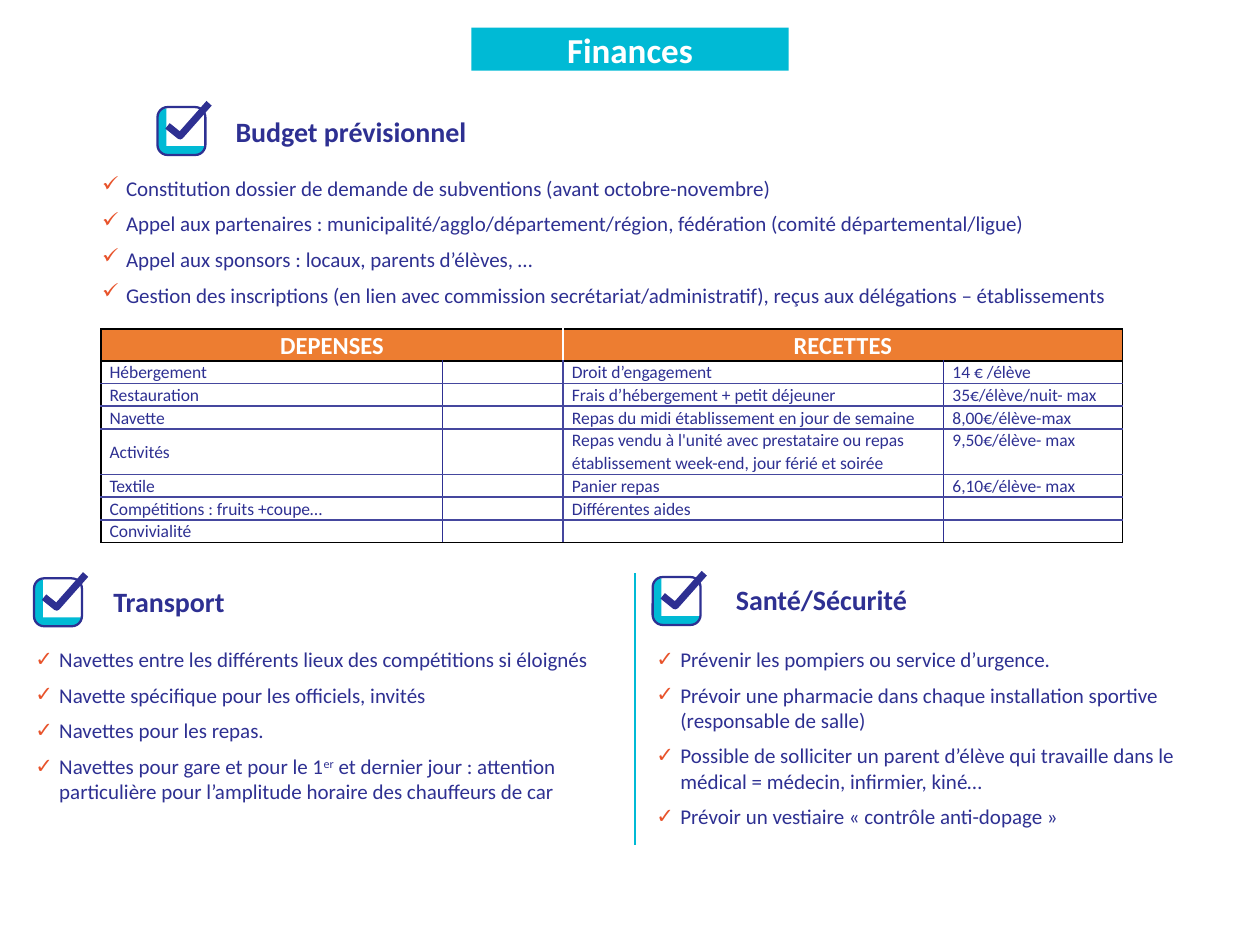
from dataclasses import dataclass

from lxml.etree import SubElement
from pptx import Presentation
from pptx.dml.color import RGBColor as RGB
from pptx.enum.shapes import MSO_CONNECTOR as CONN, MSO_SHAPE as SHAPE
from pptx.enum.text import MSO_ANCHOR as ANCHOR, MSO_AUTO_SIZE as FIT, PP_ALIGN as ALIGN
from pptx.oxml.ns import qn
from pptx.util import Inches, Pt


@dataclass(frozen=True)
class Theme:
    font: str = "Calibri"
    ink: str = "2E3092"
    cyan: str = "00BAD5"
    orange: str = "ED7D31"
    tick: str = "E8532B"
    rule: str = "45479E"
    white: str = "FFFFFF"
    black: str = "000000"
    title: int = 20
    heading: int = 16
    header: int = 14
    body: int = 12
    cell: int = 10


# Content
BUDGET = [
    "Constitution dossier de demande de subventions (avant octobre-novembre)",
    "Appel aux partenaires : municipalité/agglo/département/région, fédération (comité départemental/ligue)",
    "Appel aux sponsors : locaux, parents d’élèves, …",
    "Gestion des inscriptions (en lien avec commission secrétariat/administratif), reçus aux délégations – établissements",
]
TRANSPORT = [
    "Navettes entre les différents lieux des compétitions si éloignés",
    "Navette spécifique pour les officiels, invités",
    "Navettes pour les repas.",
    ("Navettes pour gare et pour le 1", "er",
     " et dernier jour : attention particulière pour l’amplitude horaire des chauffeurs de car"),
]
SAFETY = [
    "Prévenir les pompiers ou service d’urgence.",
    "Prévoir une pharmacie dans chaque installation sportive (responsable de salle)",
    "Possible de solliciter un parent d’élève qui travaille dans le médical = médecin, infirmier, kiné…",
    "Prévoir un vestiaire « contrôle anti-dopage »",
]
ACCOUNTS = [
    ("DEPENSES", "", "RECETTES", ""),
    ("Hébergement", "", "Droit d’engagement", "14 € /élève"),
    ("Restauration", "", "Frais d’hébergement + petit déjeuner", "35€/élève/nuit- max"),
    ("Navette", "", "Repas du midi établissement en jour de semaine", "8,00€/élève-max"),
    ("Activités", "", "Repas vendu à l'unité avec prestataire ou repas établissement week-end, "
     "jour férié et soirée", "9,50€/élève- max"),
    ("Textile", "", "Panier repas", "6,10€/élève- max"),
    ("Compétitions : fruits +coupe…", "", "Différentes aides", ""),
    ("Convivialité", "", "", ""),
]


class SlideBuilder:
    """Places elements on a grid of 100 columns by 75 rows."""

    def __init__(self, prs, layout, theme):
        self.theme = theme
        self.slide = prs.slides.add_slide(prs.slide_layouts[layout])
        self.col, self.row = prs.slide_width / 100, prs.slide_height / 75

    def x(self, cols):
        return round(cols * self.col)

    def y(self, rows):
        return round(rows * self.row)

    def box(self, x, y, w, h):
        return self.x(x), self.y(y), self.x(w), self.y(h)

    def frame(self, area, idx=None):
        """Return a placeholder moved to the area, or a new text box."""
        if idx is None:
            sp = self.slide.shapes.add_textbox(*self.box(*area))
        else:
            sp = self.slide.placeholders[idx]
            sp.left, sp.top, sp.width, sp.height = self.box(*area)
        tf = sp.text_frame
        tf.word_wrap, tf.auto_size, tf.vertical_anchor = True, FIT.NONE, ANCHOR.TOP
        tf.margin_left = tf.margin_right = tf.margin_bottom = 0
        tf.margin_top = Inches(0.01)
        return sp

    def add_text(self, p, text, size, color, bold=False, align=ALIGN.LEFT):
        """Fill a paragraph; every second run of a tuple is superscript."""
        p.alignment = align
        for i, part in enumerate((text,) if isinstance(text, str) else text):
            r = p.add_run()
            r.text = part
            f = r.font
            f.name, f.size, f.bold, f.color.rgb = self.theme.font, Pt(size), bold, RGB.from_string(color)
            if i % 2:
                r._r.get_or_add_rPr().set("baseline", "30000")

    def title(self, text, area):
        t = self.theme
        sp = self.frame(area, 0)
        sp.fill.solid()
        sp.fill.fore_color.rgb = RGB.from_string(t.cyan)
        self.add_text(sp.text_frame.paragraphs[0], text, t.title, t.white, True, ALIGN.CENTER)

    def heading(self, text, area, idx=None):
        p = self.frame(area, idx).text_frame.paragraphs[0]
        p.space_before = Pt(0)
        self.add_text(p, text, self.theme.heading, self.theme.ink, True)

    def checklist(self, items, area, idx=None):
        t = self.theme
        tf = self.frame(area, idx).text_frame
        for i, item in enumerate(items):
            p = tf.add_paragraph() if i else tf.paragraphs[0]
            p.space_before = Pt(6 if i else 0)
            pPr = p._p.get_or_add_pPr()
            pPr.set("marL", str(Inches(0.2)))
            pPr.set("indent", str(Inches(-0.19)))
            SubElement(SubElement(pPr, qn("a:buClr")), qn("a:srgbClr"), val=t.tick)
            SubElement(pPr, qn("a:buChar"), char="✓")
            self.add_text(p, item, t.body, t.ink)

    def paint(self, sp, fill=None, line=None, width=0):
        sp.shadow.inherit = False
        for part, color in ((sp.fill, fill), (sp.line.fill, line)):
            if color:
                part.solid()
                part.fore_color.rgb = RGB.from_string(color)
            else:
                part.background()
        if line:
            sp.line.width = Pt(width)

    def checkbox(self, x, y):
        """Draw a ticked box whose square starts at column x, row y."""
        t = self.theme
        shapes = self.slide.shapes.add_group_shape().shapes

        def outline(points, close):
            pts = [(self.x(x + dx), self.y(y + dy)) for dx, dy in points]
            fb = shapes.build_freeform(*pts[0], scale=1.0)
            fb.add_line_segments(pts[1:], close=close)
            return fb.convert_to_shape()

        corner = [(.7, .1), (.5, .1), (.3, .2), (.2, .4), (0, .7), (0, 3.3), (.1, 3.5), (.2, 3.6),
                  (.4, 3.7), (.6, 3.8), (3.3, 3.8), (3.7, 3.4), (3.8, 3.3), (3.8, 3.1), (.7, 3.1)]
        self.paint(outline(corner, True), fill=t.cyan)
        square = shapes.add_shape(SHAPE.ROUNDED_RECTANGLE, *self.box(x, y, 3.8, 3.8))
        square.adjustments[0] = 0.21
        self.paint(square, line=t.ink, width=1.3)
        self.paint(outline([(.8, 1.5), (1.8, 2.3), (4.1, -.3)], False), line=t.ink, width=4)

    def divider(self, x, top, bottom):
        ln = self.slide.shapes.add_connector(CONN.STRAIGHT, self.x(x), self.y(top), self.x(x), self.y(bottom))
        ln.line.color.rgb, ln.line.width = RGB.from_string(self.theme.cyan), Pt(1.25)
        SubElement(ln._element.spPr, qn("a:effectLst"))

    def borders(self, cell, **sides):
        tcPr = cell._tc.get_or_add_tcPr()
        for side in "LRTB":
            color, width = sides[side]
            ln = SubElement(tcPr, qn(f"a:ln{side}"), w=str(Pt(width)))
            SubElement(SubElement(ln, qn("a:solidFill")), qn("a:srgbClr"), val=color)

    def table(self, rows, area, widths, heights):
        t = self.theme
        n, m = len(rows), len(widths)
        tbl = self.slide.shapes.add_table(n, m, *self.box(*area)).table
        tbl.first_row = tbl.horz_banding = False
        for c, w in enumerate(widths):
            tbl.columns[c].width = self.x(w)
        outer, rule, thin = (t.black, 1), (t.rule, 1), (t.ink, 0.25)
        for i, values in enumerate(rows):
            tbl.rows[i].height = self.y(heights[i])
            head = i == 0
            middle = (t.white, 1) if head else rule
            verticals = [outer, thin, middle, thin, outer]
            for j, text in enumerate(values):
                cell = tbl.cell(i, j)
                cell.margin_left = cell.margin_right = Inches(0.07)
                cell.margin_top = cell.margin_bottom = 0
                right = j + 2 if head and j % 2 == 0 else j + 1
                self.borders(cell, L=verticals[j], R=verticals[right],
                             T=outer if i < 2 else rule, B=outer if i in (0, n - 1) else rule)
                p = cell.text_frame.paragraphs[0]
                p.line_spacing, p.space_after = 1.07, Pt(8)
                if head:
                    cell.fill.solid()
                    cell.fill.fore_color.rgb = RGB.from_string(t.orange)
                else:
                    cell.fill.background()
                if not text:  # keeps empty rows at the height of the small type
                    SubElement(p._p, qn("a:endParaRPr"), sz=str(t.cell * 100))
                elif head:
                    self.add_text(p, text, t.header, t.white, True, ALIGN.CENTER)
                else:
                    self.add_text(p, text, t.cell, t.ink)
        for j in range(0, m, 2):
            tbl.cell(0, j).merge(tbl.cell(0, j + 1))
        return tbl


def main():
    prs = Presentation()
    prs.slide_width, prs.slide_height = Inches(10), Inches(7.5)
    s = SlideBuilder(prs, 4, Theme())  # layout: title and two headed lists
    s.title("Finances", (37.4, 2.2, 25.2, 3.4))

    # Budget
    s.checkbox(12.5, 8.5)
    s.heading("Budget prévisionnel", (18.7, 9, 25.5, 2.8))
    s.checklist(BUDGET, (8, 13.8, 83.9, 10.7))
    tbl = s.table(ACCOUNTS, (8, 26.1, 81.1, 16.1), (27.1, 9.6, 30.2, 14.2),
                  [2.4] + [1.7] * 3 + [3.5] + [1.7] * 3)
    tbl.cell(4, 0).vertical_anchor = ANCHOR.MIDDLE

    # Transport
    s.checkbox(2.7, 45.9)
    s.heading("Transport", (9, 46.3, 25.5, 2.8), idx=1)
    s.checklist(TRANSPORT, (2.7, 51.2, 46.3, 12.8), idx=2)

    # Health and safety
    s.divider(50.4, 45.5, 67.1)
    s.checkbox(51.8, 45.8)
    s.heading("Santé/Sécurité", (58.4, 46.1, 25.5, 2.8), idx=3)
    s.checklist(SAFETY, (52, 51.2, 46.3, 14.8), idx=4)

    prs.save("out.pptx")


if __name__ == "__main__":
    main()
